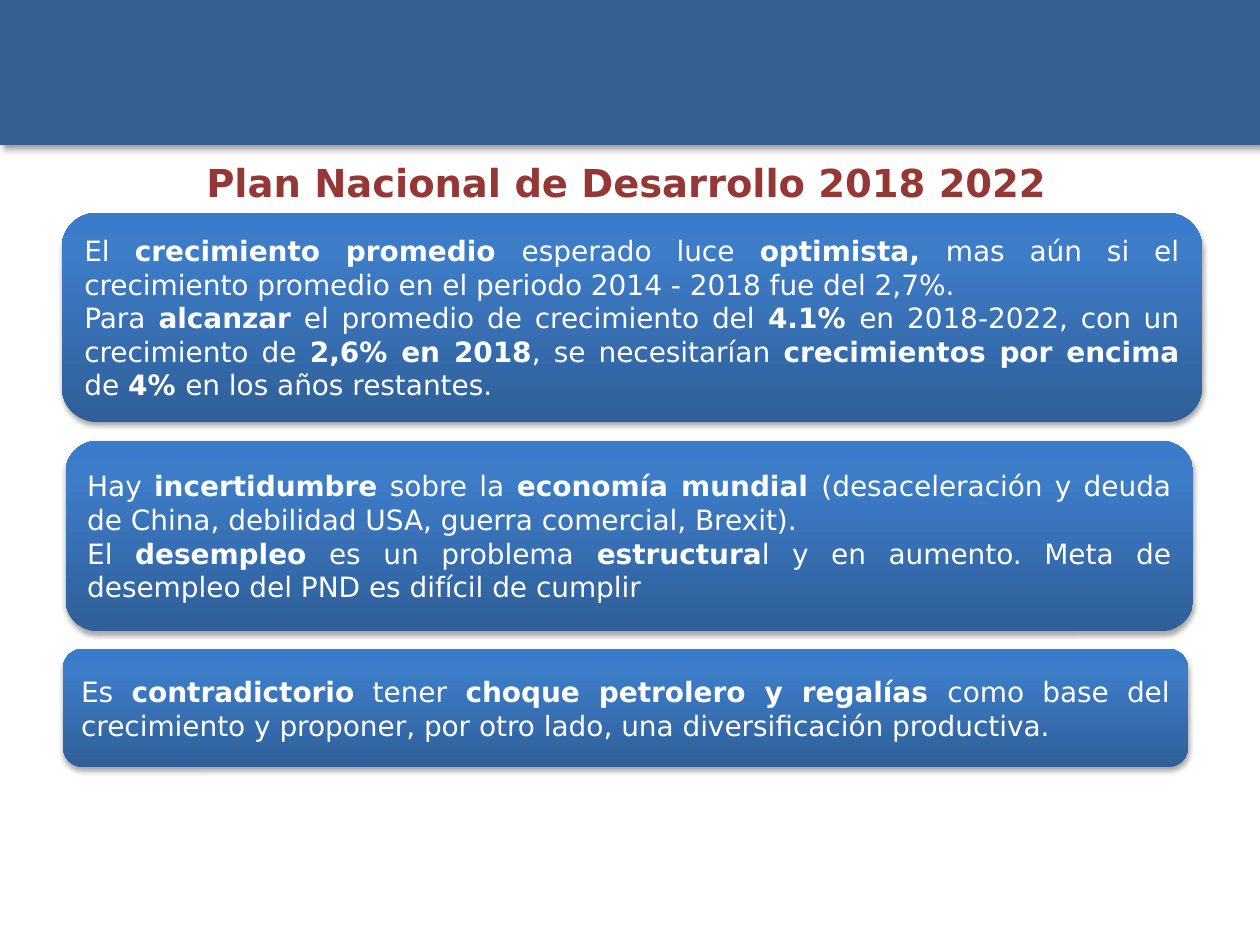
"""Build the slide on the Plan Nacional de Desarrollo 2018 2022."""
import lxml.etree
import pptx
import pptx.dml.color
import pptx.enum.shapes
import pptx.enum.text
import pptx.oxml.ns
import pptx.util

Inches = pptx.util.Inches
qn = pptx.oxml.ns.qn

COLORS = {
    "band": "376092",
    "title": "953735",
    "text": "FFFFFF",
    "shadow": "000000",
    "card_bottom": "2F5F99",
    "card_middle": "3D7CC7",
    "card_top": "3A7CCB",
}
CARD_STOPS = ((0, "card_bottom"), (80, "card_middle"), (100, "card_top"))
CARDS = (
    ((0.49, 1.69, 9.05, 1.66), (
        "El *crecimiento promedio *esperado luce *optimista, *mas aún si el "
        "crecimiento promedio en el periodo 2014 - 2018 fue del 2,7%.",
        "Para *alcanzar* el promedio de crecimiento del *4.1% *en 2018-2022, "
        "con un crecimiento de *2,6% en 2018*, se necesitarían "
        "*crecimientos por encima *de *4% *en los años restantes.",
    )),
    ((0.52, 3.5, 8.95, 1.51), (
        "Hay *incertidumbre* sobre la *economía mundial *(desaceleración y "
        "deuda de China, debilidad USA, guerra comercial, Brexit).",
        "El *desempleo* es un problema *estructura*l y en aumento. Meta de "
        "desempleo del PND es difícil de cumplir",
    )),
    ((0.5, 5.15, 8.93, 0.94), (
        "Es *contradictorio* tener *choque petrolero y regalías *como base "
        "del crecimiento y proponer, por otro lado, una diversificación "
        "productiva.",
    )),
)


class SlideBuilder:
    """Hold the style and the current slide, and add each kind of element."""

    font_name = "DejaVu Sans"
    title_size = 22
    body_size = 16

    def __init__(self, presentation):
        """Start a title-only slide."""
        self.slide = presentation.slides.add_slide(presentation.slide_layouts[5])

    def color(self, name):
        """Return a named colour."""
        return pptx.dml.color.RGBColor.from_string(COLORS[name])

    def format_run(self, run, size, color, bold):
        """Apply the slide font to a run."""
        run.font.name = self.font_name
        run.font.size = pptx.util.Pt(size)
        run.font.bold = bold
        run.font.color.rgb = self.color(color)

    def add_color_element(self, parent, name):
        """Append a colour element to an XML parent and return it."""
        return lxml.etree.SubElement(parent, qn("a:srgbClr"), val=COLORS[name])

    def set_shadow(self, shape, opacity, blur, distance, angle):
        """Give a shape an outer shadow, in percent, points and degrees."""
        shape.shadow.inherit = False
        effects = shape._element.spPr.find(qn("a:effectLst"))
        shadow = lxml.etree.SubElement(
            effects, qn("a:outerShdw"), blurRad=str(pptx.util.Pt(blur)),
            dist=str(pptx.util.Pt(distance)), dir=str(angle * 60000),
            algn="ctr", rotWithShape="0")
        color = self.add_color_element(shadow, "shadow")
        lxml.etree.SubElement(color, qn("a:alpha"), val=str(opacity * 1000))

    def set_gradient(self, shape, stops):
        """Fill a shape with a gradient that runs from bottom to top."""
        shape.fill.gradient()
        shape.fill.gradient_angle = 90
        stop_list = shape._element.spPr.find(".//" + qn("a:gsLst"))
        for stop in list(stop_list):
            stop_list.remove(stop)
        for position, name in stops:
            stop = lxml.etree.SubElement(
                stop_list, qn("a:gs"), pos=str(position * 1000))
            self.add_color_element(stop, name)

    def add_shape(self, kind, box):
        """Add a preset shape without an outline."""
        shape = self.slide.shapes.add_shape(kind, *map(Inches, box))
        shape.line.fill.background()
        return shape

    def add_band(self, box):
        """Add the plain band across the top."""
        shape = self.add_shape(pptx.enum.shapes.MSO_SHAPE.RECTANGLE, box)
        shape.fill.solid()
        shape.fill.fore_color.rgb = self.color("band")
        self.set_shadow(shape, 40, 4, 3, 45)

    def set_title(self, text, box):
        """Place and format the title placeholder."""
        title = self.slide.shapes.title
        title.left, title.top, title.width, title.height = map(Inches, box)
        frame = title.text_frame
        frame.text = text
        frame.word_wrap = True
        frame.auto_size = pptx.enum.text.MSO_AUTO_SIZE.SHAPE_TO_FIT_TEXT
        frame.vertical_anchor = pptx.enum.text.MSO_ANCHOR.TOP
        paragraph = frame.paragraphs[0]
        paragraph.alignment = pptx.enum.text.PP_ALIGN.CENTER
        self.format_run(paragraph.runs[0], self.title_size, "title", True)

    def add_card(self, box, texts):
        """Add a rounded card; asterisks enclose the bold words."""
        shape = self.add_shape(pptx.enum.shapes.MSO_SHAPE.ROUNDED_RECTANGLE, box)
        self.set_gradient(shape, CARD_STOPS)
        self.set_shadow(shape, 35, 3.1, 1.8, 90)
        frame = shape.text_frame
        frame.word_wrap = True
        frame.vertical_anchor = pptx.enum.text.MSO_ANCHOR.MIDDLE
        frame.text = "\n".join(texts)
        for paragraph, text in zip(frame.paragraphs, texts):
            paragraph.text = ""
            paragraph.alignment = pptx.enum.text.PP_ALIGN.JUSTIFY
            for index, part in enumerate(text.split("*")):
                run = paragraph.add_run()
                run.text = part
                self.format_run(run, self.body_size, "text", index % 2 == 1)


def main():
    """Build and save the presentation."""
    presentation = pptx.Presentation()
    presentation.slide_width = Inches(10)
    presentation.slide_height = Inches(7.5)
    builder = SlideBuilder(presentation)
    builder.add_band((0, 0, 10, 1.15))
    builder.set_title("Plan Nacional de Desarrollo 2018 2022",
                      (0.48, 1.21, 8.98, 0.47))
    for box, texts in CARDS:
        builder.add_card(box, texts)
    presentation.save("out.pptx")


if __name__ == "__main__":
    main()
